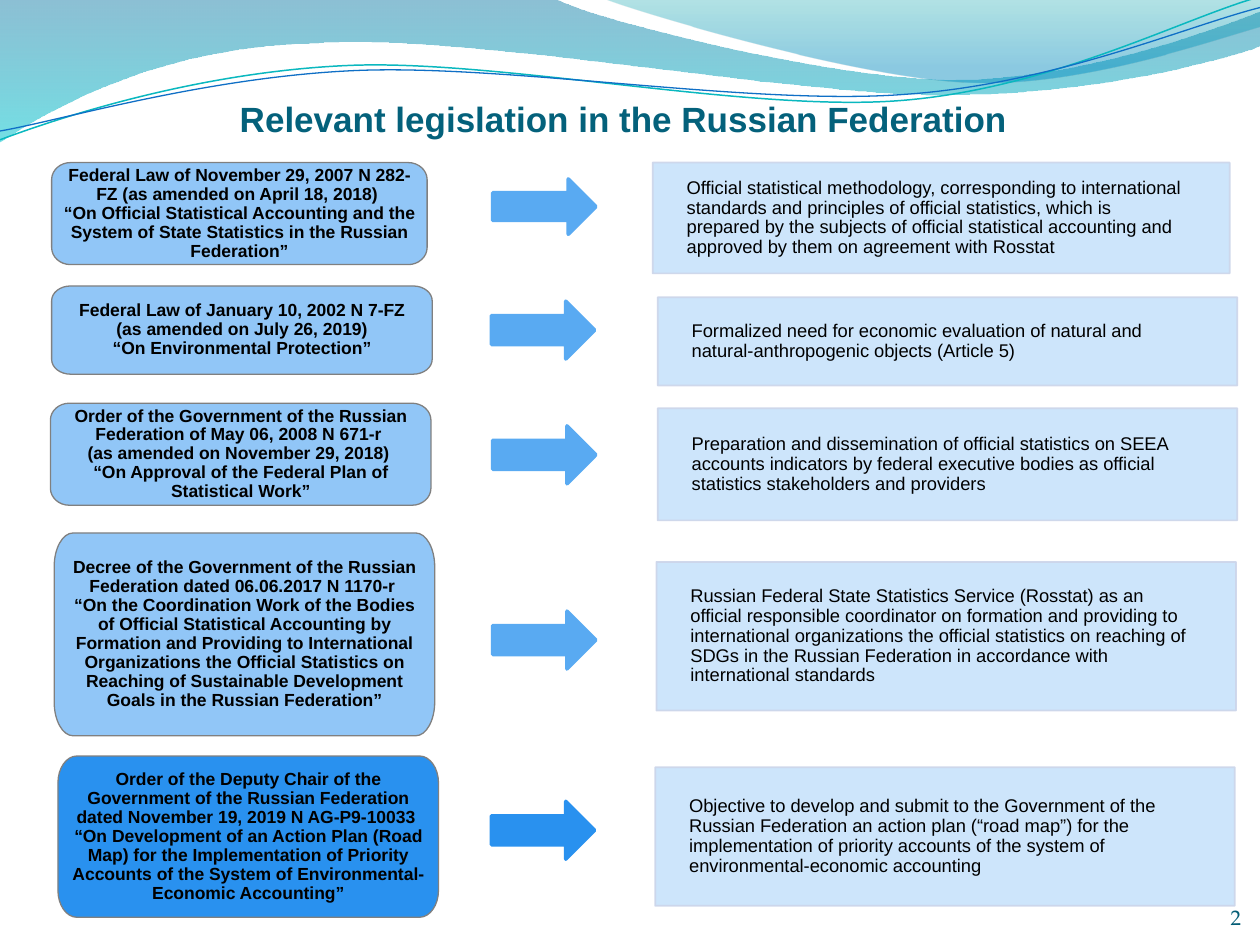
from lxml import etree
from pptx import Presentation
from pptx.dml.color import RGBColor
from pptx.enum.shapes import MSO_SHAPE
from pptx.enum.text import MSO_ANCHOR, PP_ALIGN
from pptx.oxml.ns import qn
from pptx.util import Inches, Pt

RECTANGLE, RIGHT_ARROW = MSO_SHAPE.RECTANGLE, MSO_SHAPE.RIGHT_ARROW
MIDDLE, BOTTOM = MSO_ANCHOR.MIDDLE, MSO_ANCHOR.BOTTOM
LEFT, CENTER, RIGHT = PP_ALIGN.LEFT, PP_ALIGN.CENTER, PP_ALIGN.RIGHT

BLACK = RGBColor(0x00, 0x00, 0x00)
GRAY = RGBColor(0x80, 0x80, 0x80)
TITLE_TEAL = RGBColor(0x04, 0x61, 0x7B)
NUMBER_TEAL = RGBColor(0x04, 0x5D, 0x75)
LAW_BLUE = RGBColor(0x91, 0xC6, 0xF7)
ARROW_BLUE = RGBColor(0x59, 0xAA, 0xF2)
STRONG_BLUE = RGBColor(0x29, 0x91, 0xEF)
PALE_BLUE = RGBColor(0xC8, 0xE3, 0xFB)
PALE_BORDER = RGBColor(0xCC, 0xD5, 0xEA)
WAVE_BLUE = RGBColor(0x00, 0x74, 0xA1)
WAVE_CYAN = RGBColor(0x00, 0xC6, 0xCF)
CREST_TEAL = RGBColor(0x00, 0xA1, 0xA9)
CREST_BLUE = RGBColor(0x00, 0x8B, 0xBF)
LINE_TEAL = RGBColor(0x0A, 0xB8, 0xBF)
LINE_BLUE = RGBColor(0x0F, 0x6F, 0xC6)

LINE_SPACING = 0.9

WAVES = [
    ([(0, 0), (4.4, -0.01), (4.76, 0.17, 6.64, 0.63, 7.58, 0.63), (8.53, 0.63, 9.58, 0.26, 10, 0.09),
      (10.01, 0.36), (9.83, 0.44, 8.7, 0.76, 7.46, 0.75), (6.22, 0.75, 3.82, 0.28, 2.57, 0.34),
      (1.29, 0.36, 0.46, 0.83, -0.01, 1.13)],
     [(0, WAVE_BLUE, 45), (1, WAVE_CYAN, 55)]),
    ([(4.79, -0.01), (5.09, 0.11, 6.82, 0.62, 7.69, 0.65), (8.56, 0.69, 9.61, 0.32, 10, 0.21), (10, 0)],
     [(0, CREST_TEAL, 30), (0.8, CREST_BLUE, 45)]),
]
WAVE_LINES = [
    ([(0, 1.11), (0.48, 0.93, 1.58, 0.57, 2.77, 0.52), (3.95, 0.47, 5.93, 0.89, 7.13, 0.8),
      (8.33, 0.71, 9.38, 0.15, 9.98, -0.02)], LINE_TEAL, 0.85),
    ([(0, 1.04), (0.47, 0.96, 1.64, 0.61, 2.83, 0.56), (4.03, 0.51, 5.97, 0.84, 7.17, 0.75),
      (8.36, 0.67, 9.41, 0.21, 10, 0.06)], LINE_BLUE, 0.75),
]
ROWS = [
    ((0.41, 1.29, 2.98, 0.81), (3.91, 1.42, 0.82, 0.44), (5.18, 1.29, 4.58, 0.88), LAW_BLUE, ARROW_BLUE,
     "Federal Law of November 29, 2007 N 282-FZ (as amended on April 18, 2018) \v“On Official Statistical "
     "Accounting and the System of State Statistics in the Russian Federation”",
     "Official statistical methodology, corresponding to international standards and principles of official "
     "statistics, which is prepared by the subjects of official statistical accounting and approved by them "
     "on agreement with Rosstat"),
    ((0.41, 2.27, 3.02, 0.7), (3.9, 2.39, 0.82, 0.46), (5.22, 2.36, 4.6, 0.7), LAW_BLUE, ARROW_BLUE,
     "Federal Law of January 10, 2002 N 7-FZ\v (as amended on July 26, 2019) \v“On Environmental Protection”",
     "Formalized need for economic evaluation of natural and natural-anthropogenic objects (Article 5)"),
    ((0.4, 3.2, 3.02, 0.81), (3.91, 3.38, 0.82, 0.46), (5.22, 3.24, 4.6, 0.89), LAW_BLUE, ARROW_BLUE,
     "Order of the Government of the Russian Federation of May 06, 2008 N 671-r \v(as amended on November 29, "
     "2018) \v“On Approval of the Federal Plan of Statistical Work”",
     "Preparation and dissemination of official statistics on SEEA accounts indicators by federal executive "
     "bodies as official statistics stakeholders and providers"),
    ((0.43, 4.23, 3.02, 1.61), (3.91, 4.85, 0.82, 0.46), (5.21, 4.46, 4.6, 1.18), LAW_BLUE, ARROW_BLUE,
     "Decree of the Government of the Russian Federation dated 06.06.2017 N 1170-r \v“On the Coordination Work "
     "of the Bodies of Official Statistical Accounting by Formation and Providing to International "
     "Organizations the Official Statistics on Reaching of Sustainable Development Goals in the Russian "
     "Federation”",
     "Russian Federal State Statistics Service (Rosstat) as an official responsible coordinator on formation "
     "and providing to international organizations the official statistics on reaching of SDGs in the Russian "
     "Federation in accordance with international standards"),
    ((0.46, 6, 3.02, 1.28), (3.9, 6.36, 0.82, 0.46), (5.2, 6.09, 4.6, 1.1), STRONG_BLUE, STRONG_BLUE,
     "Order of the Deputy Chair of the Government of the Russian Federation dated November 19, 2019 N "
     "AG-P9-10033 \v“On Development of an Action Plan (Road Map) for the Implementation of Priority Accounts of "
     "the System of Environmental-Economic Accounting”",
     "Objective to develop and submit to the Government of the Russian Federation an action plan (“road map”) "
     "for the implementation of priority accounts of the system of environmental-economic accounting"),
]


def add_outline(slide, segments, close):
    """Add a freeform of lines and cubic curves."""
    ends = [(Inches(segment[-2]), Inches(segment[-1])) for segment in segments]
    builder = slide.shapes.build_freeform(*ends[0])
    builder.add_line_segments(ends[1:], close=close)
    shape = builder.convert_to_shape()
    shape.shadow.inherit = False
    lines = list(shape._element.spPr.iter(qn("a:lnTo")))
    for line, segment in zip(lines, segments[1:]):
        if len(segment) == 6:
            line.tag = qn("a:cubicBezTo")
            for index in (0, 2):
                point = etree.Element(qn("a:pt"))
                point.set("x", str(Inches(segment[index]) - shape.left))
                point.set("y", str(Inches(segment[index + 1]) - shape.top))
                line.insert(index // 2, point)
    return shape


def set_opacity(shape, percentages):
    """Set the opacity of the shape's colours in order."""
    colors = shape._element.spPr.iter(qn("a:srgbClr"))
    for color, percentage in zip(list(colors), percentages):
        etree.SubElement(color, qn("a:alpha")).set("val", str(percentage * 1000))


def paint(shape, fill, line, width):
    """Give the shape a solid fill and a plain outline."""
    shape.shadow.inherit = False
    shape.fill.solid()
    shape.fill.fore_color.rgb = fill
    shape.line.color.rgb = line
    shape.line.width = Pt(width)


def write(shape, text, size, color, align, anchor, insets, font="Arial", bold=False, spacing=1.0):
    """Write one formatted paragraph into the shape."""
    frame = shape.text_frame
    frame.word_wrap = True
    frame.vertical_anchor = anchor
    frame.margin_left, frame.margin_top, frame.margin_right, frame.margin_bottom = map(Inches, insets)
    paragraph = frame.paragraphs[0]
    paragraph.text = text
    paragraph.alignment = align
    paragraph.line_spacing = spacing
    for run in paragraph.runs:
        run.font.name = font
        run.font.size = Pt(size)
        run.font.bold = bold
        run.font.color.rgb = color


def add_waves(slide):
    """Draw the wave decoration along the top edge."""
    for segments, stops in WAVES:
        wave = add_outline(slide, segments, True)
        wave.fill.gradient()
        wave.fill.gradient_angle = 270
        for gradient_stop, (position, color, _) in zip(wave.fill.gradient_stops, stops):
            gradient_stop.position = position
            gradient_stop.color.rgb = color
        wave.line.fill.background()
        set_opacity(wave, [stop[2] for stop in stops])
    for segments, color, width in WAVE_LINES:
        wave_line = add_outline(slide, segments, False)
        wave_line.fill.background()
        wave_line.line.color.rgb = color
        wave_line.line.width = Pt(width)


def add_law(slide, box, fill, text):
    """Draw a law in a box whose corners stretch with its height."""
    left, top, width, height = box
    right, bottom = left + width, top + height
    rx, ry = 0.15, height / 6
    kx, ky = rx * 0.45, ry * 0.45
    segments = [
        (left, top + ry), (left, top + ky, left + kx, top, left + rx, top),
        (right - rx, top), (right - kx, top, right, top + ky, right, top + ry),
        (right, bottom - ry), (right, bottom - ky, right - kx, bottom, right - rx, bottom),
        (left + rx, bottom), (left + kx, bottom, left, bottom - ky, left, bottom - ry),
    ]
    shape = add_outline(slide, segments, True)
    paint(shape, fill, GRAY, 0.75)
    write(shape, text, 10, BLACK, CENTER, MIDDLE, (0.09, 0.07, 0.09, 0.07), bold=True, spacing=LINE_SPACING)


def add_arrow(slide, box, color):
    """Draw the arrow from a law to its outcome."""
    paint(slide.shapes.add_shape(RIGHT_ARROW, *map(Inches, box)), color, color, 2)


def add_outcome(slide, box, text):
    """Draw the outcome of a law in a pale rectangle."""
    shape = slide.shapes.add_shape(RECTANGLE, *map(Inches, box))
    paint(shape, PALE_BLUE, PALE_BORDER, 1)
    set_opacity(shape, [90, 90])
    write(shape, text, 10.5, BLACK, LEFT, MIDDLE, (0.27, 0.17, 0.32, 0.17), spacing=LINE_SPACING)


def add_title(slide, box):
    """Place the slide title."""
    shape = slide.shapes.add_textbox(*map(Inches, box))
    write(shape, "Relevant legislation in the Russian Federation", 20, TITLE_TEAL, CENTER, BOTTOM,
          (0, 0.05, 0, 0.2), bold=True)


def add_page_number(slide, box):
    """Place the page number."""
    shape = slide.shapes.add_textbox(*map(Inches, box))
    write(shape, "2", 12, NUMBER_TEAL, RIGHT, BOTTOM, (0, 0, 0, 0), font="TeX Gyre Pagella")


def main():
    """Build and save the presentation."""
    presentation = Presentation()
    presentation.slide_width, presentation.slide_height = Inches(10), Inches(7.5)
    slide = presentation.slides.add_slide(presentation.slide_layouts[6])
    add_waves(slide)
    add_title(slide, (0.45, 0.69, 9, 0.62))
    for law_box, arrow_box, outcome_box, law_color, arrow_color, law, outcome in ROWS:
        add_law(slide, law_box, law_color, law)
        add_arrow(slide, arrow_box, arrow_color)
        add_outcome(slide, outcome_box, outcome)
    add_page_number(slide, (9.02, 6.98, 0.83, 0.4))
    presentation.save("out.pptx")


if __name__ == "__main__":
    main()
